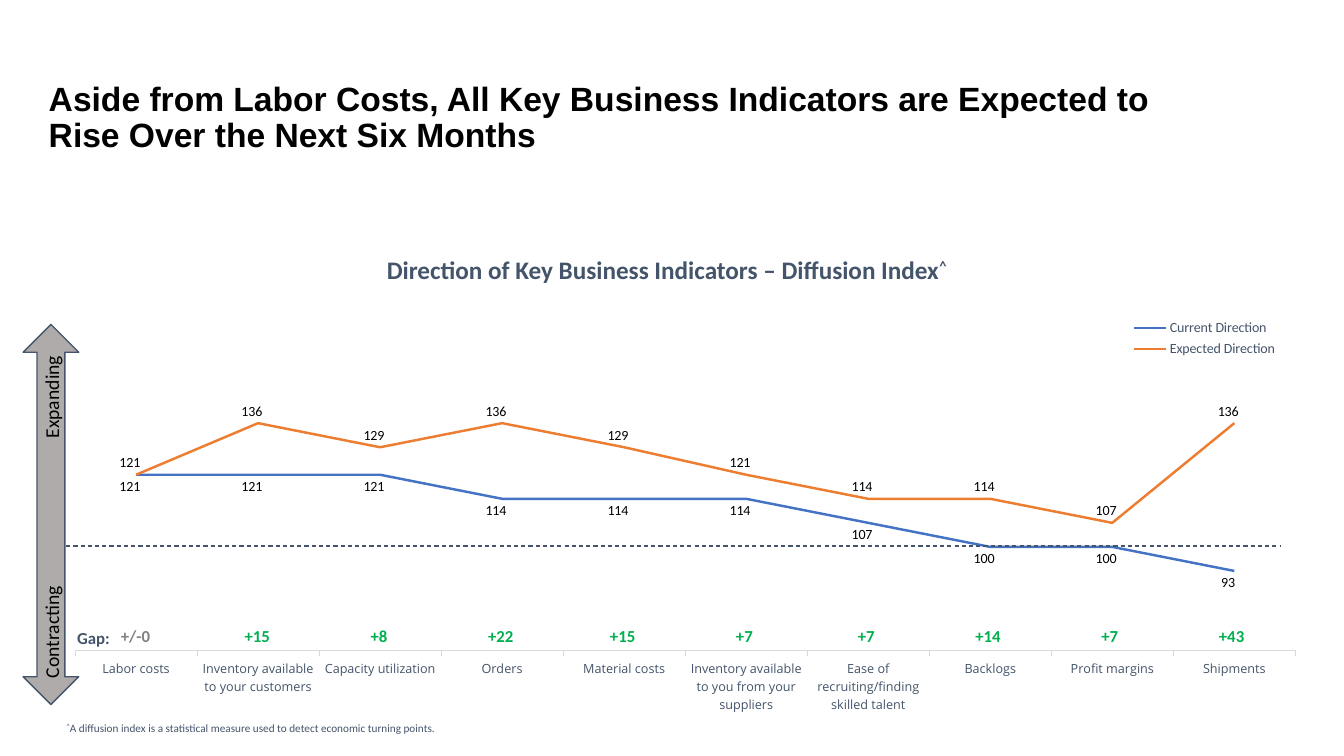
from lxml import etree
from pptx import Presentation
from pptx.chart.data import CategoryChartData
from pptx.dml.color import RGBColor
from pptx.enum.chart import XL_CHART_TYPE as Kind, XL_LABEL_POSITION as Pos
from pptx.enum.chart import XL_LEGEND_POSITION as Side, XL_TICK_MARK as Tick
from pptx.enum.dml import MSO_LINE as Dash
from pptx.enum.shapes import MSO_CONNECTOR as Link, MSO_SHAPE as Shape
from pptx.enum.text import MSO_ANCHOR as Anchor, PP_ALIGN as Align
from pptx.oxml import parse_xml
from pptx.oxml.ns import nsdecls, qn
from pptx.util import Pt

PX = 9525
SLATE, BLACK, GRAY, GREEN = "44546A", "000000", "808080", "00B050"
NAMES = ["Labor costs", "Inventory available to your customers",
         "Capacity utilization", "Orders", "Material costs",
         "Inventory available to you from your suppliers",
         "Ease of recruiting/finding skilled talent", "Backlogs",
         "Profit margins", "Shipments"]
SERIES = [
    ("Current Direction", "4472C4", Pos.BELOW,
     [121, 121, 121, 114, 114, 114, 107, 100, 100, 93]),
    ("Expected Direction", "ED7D31", Pos.ABOVE,
     [121, 136, 129, 136, 129, 121, 114, 114, 107, 136]),
]
GAPS = ["+/-0", "+15", "+8", "+22", "+15", "+7", "+7", "+14", "+7", "+43"]


def px(*nums):
    """Turn px lengths into EMU."""
    return [round(n * PX) for n in nums]


def color(code):
    """Turn a hex string into a colour."""
    return RGBColor.from_string(code)


def style(font, size, code, bold=False, face="Calibri"):
    """Set the look of a font."""
    font.size, font.bold, font.name = Pt(size), bold, face
    font.color.rgb = color(code)


def write(slide, box, parts, size, code=SLATE, bold=False, face="Calibri",
          align=Align.LEFT, wrap=True):
    """Add a one-paragraph text box, raising each caret."""
    shape = slide.shapes.add_textbox(*px(*box))
    frame = shape.text_frame
    frame.word_wrap = wrap
    para = frame.paragraphs[0]
    para.alignment = align
    style(para.font, size, code, bold, face)
    for part in parts:
        run = para.add_run()
        run.text = part
        if part == "^":
            run._r.get_or_add_rPr().set("baseline", "30000")
    return shape


def layout(x, y, w=None, h=None, inner=False):
    """Build a chart layout from fractions of its frame."""
    node = parse_xml(f"<c:layout {nsdecls('c')}><c:manualLayout/></c:layout>")
    items = {"x": x, "y": y}
    if w:
        items = {"xMode": "edge", "yMode": "edge", **items, "w": w, "h": h}
    if inner:
        items = {"layoutTarget": "inner", **items}
    for tag, val in items.items():
        etree.SubElement(node[0], qn(f"c:{tag}")).set("val", str(val))
    return node


def place(parent, node, after=None):
    """Put a layout into a chart part in place of any old one."""
    for old in parent.findall(qn("c:layout")):
        parent.remove(old)
    if after is None:
        parent.insert(0, node)
    else:
        parent.find(qn(after)).addnext(node)


def draw_chart(slide, box):
    """Draw the two index lines with labels, axis and legend."""
    data = CategoryChartData(number_format="0")
    data.categories = NAMES
    for name, _, _, vals in SERIES:
        data.add_series(name, vals)
    chart = slide.shapes.add_chart(Kind.LINE, *px(*box), data).chart
    chart.has_title = False
    style(chart.font, 10, BLACK)
    plot = chart.plots[0]
    plot.vary_by_categories = False
    place(chart._chartSpace.chart.plotArea,
          layout(0.008, 0.07, 0.98, 0.724, True))

    for line, (_, code, pos, vals) in zip(plot.series, SERIES):
        line.smooth = False
        line.format.line.color.rgb = color(code)
        line.format.line.width = Pt(1.75)
        labels = line.data_labels
        labels.show_value, labels.position = True, pos
        labels.number_format, labels.number_format_is_linked = "0", False
        style(labels.font, 10, BLACK)
        for i in range(len(vals)):
            line.points[i].data_label.position = pos
        for label in labels._element.findall(qn("c:dLbl")):
            place(label, layout(-0.005, 0), "c:idx")

    axis = chart.value_axis
    axis.minimum_scale, axis.maximum_scale = 70, 160
    axis.has_major_gridlines = axis.visible = False
    axis = chart.category_axis
    axis.major_tick_mark = Tick.OUTSIDE
    axis.format.line.color.rgb = color("D9D9D9")
    axis.format.line.width = Pt(0.75)
    style(axis.tick_labels.font, 9, SLATE, face="Open Sans")

    chart.has_legend = True
    legend = chart.legend
    legend.position, legend.include_in_layout = Side.RIGHT, False
    style(legend.font, 10, SLATE)
    place(legend._element, layout(0.845, 0.01, 0.14, 0.11), "c:legendPos")


def draw_gaps(slide, box):
    """Draw the row of gaps under the lines."""
    x, y, w, h = box
    table = slide.shapes.add_table(1, len(GAPS), *px(*box)).table
    table.first_row = table.horz_banding = False
    for i, gap in enumerate(GAPS):
        table.columns[i].width = px(w / len(GAPS))[0]
        cell = table.cell(0, i)
        cell.fill.background()
        cell.vertical_anchor = Anchor.MIDDLE
        cell.margin_left = cell.margin_right = cell.margin_top = px(1)[0]
        cell.margin_bottom = 0
        cell.text = gap
        para = cell.text_frame.paragraphs[0]
        para.alignment = Align.CENTER
        style(para.font, 12, GREEN if i else GRAY, True)
    write(slide, (x - 7, y - 3, 89, 29), ["Gap:"], 12, bold=True)


def draw_scale(slide, box):
    """Draw the upright arrow, its two words and the neutral line."""
    x, y, w, h = box
    mid = x + w / 2
    level = y + 211
    line = slide.shapes.add_connector(
        Link.STRAIGHT, *px(mid - 13, level, mid + 1171, level))
    line.line.color.rgb = color(SLATE)
    line.line.width, line.line.dash_style = Pt(0.75), Dash.DASH
    etree.SubElement(line._element.spPr, qn("a:effectLst"))

    arrow = slide.shapes.add_shape(
        Shape.LEFT_RIGHT_ARROW, *px(mid - h / 2, y + h / 2 - w / 2, h, w))
    arrow.rotation = 90
    arrow.shadow.inherit = False
    arrow.fill.solid()
    arrow.fill.fore_color.rgb = color("AFABAB")
    arrow.line.color.rgb = color(SLATE)
    arrow.line.width = Pt(1)

    for word, top, align in (("Expanding", 80, Align.RIGHT),
                             ("Contracting", 255, Align.LEFT)):
        text = write(slide, (mid - 75, y + top, 151, 32), [word], 14, BLACK,
                     align=align)
        text.rotation = 270


def draw_heads(slide, box):
    """Write the title, the chart heading and the footnote."""
    x, y, w, h = box
    title = write(slide, (x + 37, y + 69, 1070, 88),
                  ["Aside from Labor Costs, All Key Business Indicators are "
                   "Expected to Rise Over the Next Six Months"],
                  24, BLACK, True, "Arial")
    title.text_frame.vertical_anchor = Anchor.MIDDLE
    title.text_frame.paragraphs[0].line_spacing = 0.9
    write(slide, (x - 5, y + 237, w, 38),
          ["Direction of Key Business Indicators – Diffusion Index", "^"],
          18, bold=True, align=Align.CENTER)
    write(slide, (x + 54, y + 682, 409, 23),
          ["^", "A diffusion index is a statistical measure used to detect "
           "economic turning points."], 8, wrap=False)


def main():
    """Build and save the slide."""
    deck = Presentation()
    deck.slide_width, deck.slide_height = px(1280, 720)
    slide = deck.slides.add_slide(deck.slide_layouts[6])
    draw_chart(slide, (62, 296, 1186, 407))
    draw_gaps(slide, (71, 596, 1160, 20))
    draw_heads(slide, (0, 0, 1280, 720))
    draw_scale(slide, (22, 309, 53, 362))
    deck.save("out.pptx")


if __name__ == "__main__":
    main()
